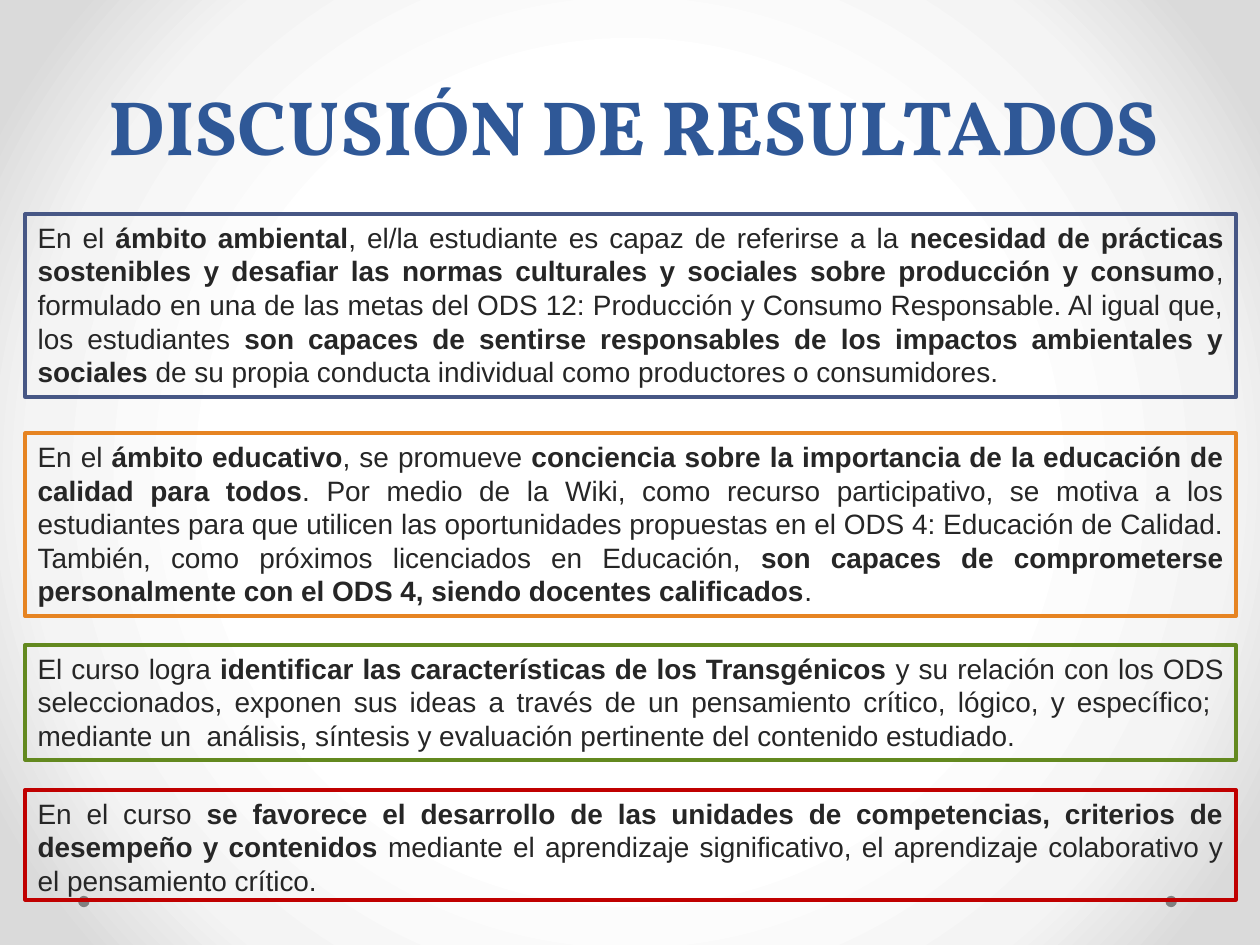
from dataclasses import dataclass

from pptx import Presentation
from pptx.dml.color import RGBColor
from pptx.enum.shapes import MSO_SHAPE
from pptx.enum.text import MSO_ANCHOR, MSO_AUTO_SIZE, PP_ALIGN
from pptx.oxml import parse_xml
from pptx.oxml.ns import nsdecls, qn
from pptx.util import Inches, Pt

COLUMNS, ROWS = 100, 75


@dataclass(frozen=True)
class Theme:
    title_font: str = "Vollkorn"
    body_font: str = "Arial"
    title_size: int = 44
    title_leading: int = 58
    body_size: int = 16
    frame_width: float = 2.25
    title: str = "2F5897"
    body: str = "262626"
    dot: str = "808080"
    environment: str = "475785"
    education: str = "E68422"
    course: str = "63891F"
    skills: str = "C00000"
    # Position in thousandths of a percent, colour
    backdrop: tuple = ((50000, "FFFFFF"), (76000, "F4F4F4"), (92000, "DADADA"))


def add_span(para, text, *, font, size, color, bold=False):
    span = para.add_run()
    span.text = text
    span.font.name = font
    span.font.size = Pt(size)
    span.font.bold = bold
    span.font.color.rgb = RGBColor.from_string(color)


class PageBuilder:
    """Places elements on a page with a grid of 100 columns and 75 rows."""

    def __init__(self, deck, theme):
        self.theme = theme
        self.column = deck.slide_width / COLUMNS
        self.row = deck.slide_height / ROWS
        self.page = deck.slides.add_slide(deck.slide_layouts.get_by_name("Title Only"))

    def place(self, left, top, width, height):
        return (round(left * self.column), round(top * self.row),
                round(width * self.column), round(height * self.row))

    def backdrop(self):
        self.page.background.fill.solid()
        solid = next(self.page.element.iter(qn("a:solidFill")))
        stops = "".join(f'<a:gs pos="{position}"><a:srgbClr val="{color}"/></a:gs>'
                        for position, color in self.theme.backdrop)
        gradient = parse_xml(
            f'<a:gradFill {nsdecls("a")} rotWithShape="1"><a:gsLst>{stops}</a:gsLst>'
            '<a:path path="circle"><a:fillToRect l="50000" t="50000" r="50000" b="50000"/>'
            '</a:path></a:gradFill>')
        solid.getparent().replace(solid, gradient)

    def dot(self, left, top, size):
        dot = self.page.shapes.add_shape(MSO_SHAPE.OVAL, *self.place(left, top, size, size))
        dot.shadow.inherit = False
        dot.fill.solid()
        dot.fill.fore_color.rgb = RGBColor.from_string(self.theme.dot)
        dot.line.fill.background()

    def title(self, text, *area):
        box = self.page.shapes.title
        box.left, box.top, box.width, box.height = self.place(*area)
        frame = box.text_frame
        frame.auto_size = MSO_AUTO_SIZE.NONE
        frame.vertical_anchor = MSO_ANCHOR.BOTTOM
        para = frame.paragraphs[0]
        para.alignment = PP_ALIGN.CENTER
        para.line_spacing = Pt(self.theme.title_leading)
        add_span(para, text, font=self.theme.title_font, size=self.theme.title_size,
                 color=self.theme.title, bold=True)

    def text(self, marked, *area):
        """Justified text; the parts between asterisks are bold."""
        box = self.page.shapes.add_textbox(*self.place(*area))
        box.text_frame.word_wrap = True
        para = box.text_frame.paragraphs[0]
        para.alignment = PP_ALIGN.JUSTIFY
        for index, part in enumerate(marked.split("*")):
            if part:
                add_span(para, part, font=self.theme.body_font, size=self.theme.body_size,
                         color=self.theme.body, bold=index % 2 == 1)

    def frame(self, color, *area):
        box = self.page.shapes.add_shape(MSO_SHAPE.RECTANGLE, *self.place(*area))
        box.shadow.inherit = False
        box.fill.background()
        box.line.color.rgb = RGBColor.from_string(color)
        box.line.width = Pt(self.theme.frame_width)


def main():
    deck = Presentation()
    deck.slide_width, deck.slide_height = Inches(10), Inches(7.5)
    theme = Theme()
    builder = PageBuilder(deck, theme)

    # Backdrop with its two dots
    builder.backdrop()
    for left in (92.5, 6.2):
        builder.dot(left, 71.1, 0.9)

    builder.title("DISCUSIÓN DE RESULTADOS", -2, -3.4, 104.7, 17.5)

    # Framed findings: frame colour, top row, height in rows, text
    findings = (
        (theme.environment, 17, 14.5,
         "En el *ámbito ambiental*, el/la estudiante es capaz de referirse a la *necesidad de "
         "prácticas sostenibles y desafiar las normas culturales y sociales sobre producción y "
         "consumo*, formulado en una de las metas del ODS 12: Producción y Consumo Responsable. "
         "Al igual que, los estudiantes *son capaces de sentirse responsables de los impactos "
         "ambientales y sociales *de su propia conducta individual como productores o "
         "consumidores."),
        (theme.education, 34.4, 14.5,
         "En el *ámbito educativo*, se promueve *conciencia sobre la importancia de la educación "
         "de calidad para todos*. Por medio de la Wiki, como recurso participativo, se motiva a "
         "los estudiantes para que utilicen las oportunidades propuestas en el ODS 4: Educación "
         "de Calidad. También, como próximos licenciados en Educación,* son capaces de "
         "comprometerse personalmente con el ODS 4, siendo docentes calificados*."),
        (theme.course, 51.2, 9.1,
         "El curso logra *identificar las características de los Transgénicos *y su relación con "
         "los ODS seleccionados, exponen sus ideas a través de un pensamiento crítico, lógico, y "
         "específico;  mediante un  análisis, síntesis y evaluación pertinente del contenido "
         "estudiado."),
        (theme.skills, 62.7, 8.7,
         "En el curso *se favorece el desarrollo de las unidades de competencias, criterios de "
         "desempeño y contenidos* mediante el aprendizaje significativo, el aprendizaje "
         "colaborativo y el pensamiento crítico."),
    )
    for color, top, height, marked in findings:
        area = (2, top, 96.1, height)
        builder.text(marked, *area)
        builder.frame(color, *area)

    deck.save("out.pptx")


if __name__ == "__main__":
    main()
